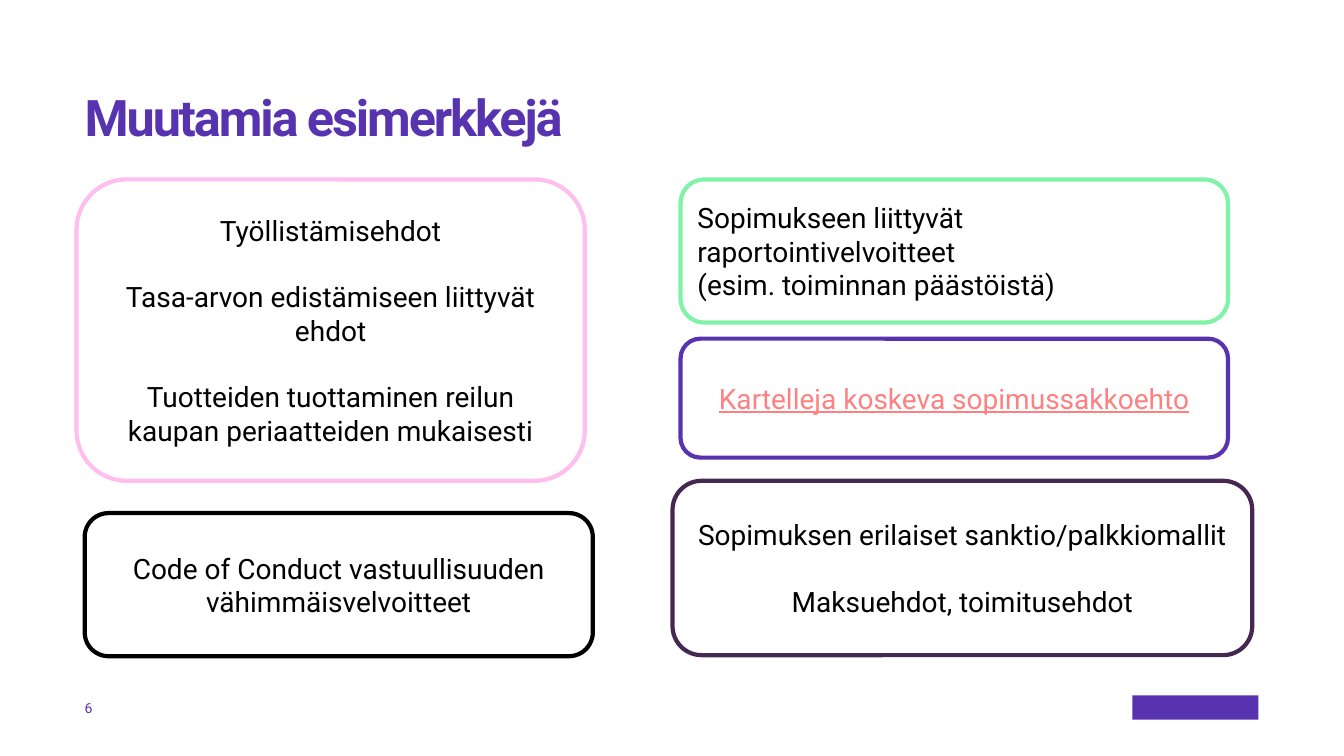
from pptx import Presentation
from pptx.dml.color import RGBColor
from pptx.enum.shapes import MSO_SHAPE
from pptx.enum.text import MSO_ANCHOR, PP_ALIGN
from pptx.util import Inches, Pt

LEFT, CENTER = PP_ALIGN.LEFT, PP_ALIGN.CENTER
TOP, MIDDLE = MSO_ANCHOR.TOP, MSO_ANCHOR.MIDDLE
COLORS = {
    "white": "FFFFFF", "black": "000000", "violet": "5733AF", "pink": "FFBFEE",
    "plum": "442850", "green": "81F3A9", "coral": "FE8081",
}
FONT = "Roboto"
BODY_SIZE = 20
BLANK_LINE = 23.4  # one line of body text, in points

TITLE = "Muutamia esimerkkejä"
PAGE_NUMBER = "6"

MARGIN = 0.84
RIGHT_COLUMN = 6.75
ROW_TOP = 1.78
COLUMN_WIDTH, RIGHT_WIDTH = 5.04, 5.43
CARD_HEIGHT = 1.42
FOOTER_TOP, FOOTER_HEIGHT = 6.9, 0.24

# (left, top, width, height), outline, text colour, alignment, paragraphs
CARDS = [
    ((0.76, ROW_TOP, COLUMN_WIDTH, 2.99), "pink", "black", CENTER,
     ["Työllistämisehdot", "Tasa-arvon edistämiseen liittyvät ehdot",
      "Tuotteiden tuottaminen reilun kaupan periaatteiden mukaisesti"]),
    ((MARGIN, 5.09, COLUMN_WIDTH, CARD_HEIGHT), "black", "black", CENTER,
     ["Code of Conduct vastuullisuuden vähimmäisvelvoitteet"]),
    ((6.67, 4.77, 5.75, 1.73), "plum", "black", CENTER,
     ["Sopimuksen erilaiset sanktio/palkkiomallit", "Maksuehdot, toimitusehdot"]),
    ((RIGHT_COLUMN, ROW_TOP, RIGHT_WIDTH, CARD_HEIGHT), "green", "black", LEFT,
     ["Sopimukseen liittyvät raportointivelvoitteet\v(esim. toiminnan päästöistä)"]),
    ((RIGHT_COLUMN, 3.36, RIGHT_WIDTH, 1.18), "violet", "coral", CENTER,
     ["Kartelleja koskeva sopimussakkoehto"]),
]


def rgb(name):
    return RGBColor.from_string(COLORS[name])


def set_font(paragraph, size, color):
    paragraph.font.name = FONT
    paragraph.font.size = Pt(size)
    paragraph.font.color.rgb = rgb(color)


def add_label(slide, text, box, size, anchor):
    """Add a violet one-line text box without insets and return its paragraph."""
    frame = slide.shapes.add_textbox(*map(Inches, box)).text_frame
    frame.margin_left = frame.margin_right = 0
    frame.margin_top = frame.margin_bottom = 0
    frame.word_wrap = True
    frame.vertical_anchor = anchor
    paragraph = frame.paragraphs[0]
    paragraph.text = text
    set_font(paragraph, size, "violet")
    return paragraph


def add_card(slide, box, outline, text_color, alignment, texts):
    card = slide.shapes.add_shape(MSO_SHAPE.ROUNDED_RECTANGLE, *map(Inches, box))
    card.shadow.inherit = False
    card.fill.solid()
    card.fill.fore_color.rgb = rgb("white")
    card.line.color.rgb = rgb(outline)
    card.line.width = Pt(3)
    frame = card.text_frame
    frame.word_wrap = True
    frame.vertical_anchor = MIDDLE
    for index, text in enumerate(texts):
        paragraph = frame.add_paragraph() if index else frame.paragraphs[0]
        paragraph.text = text
        paragraph.alignment = alignment
        if index:
            paragraph.space_before = Pt(BLANK_LINE)
        set_font(paragraph, BODY_SIZE, text_color)
        if text_color == "coral":
            paragraph.font.underline = True


def main():
    deck = Presentation()
    deck.slide_width, deck.slide_height = Inches(13.33), Inches(7.5)
    slide = deck.slides.add_slide(deck.slide_layouts[6])

    emblem = slide.shapes.add_shape(
        MSO_SHAPE.RECTANGLE, *map(Inches, (11.23, FOOTER_TOP, 1.25, FOOTER_HEIGHT)))
    emblem.shadow.inherit = False
    emblem.fill.solid()
    emblem.fill.fore_color.rgb = rgb("violet")
    emblem.line.fill.background()

    title = add_label(slide, TITLE, (MARGIN, 0.92, 11.66, 1.73), 36, TOP)
    title.line_spacing = 0.9
    title.font.bold = True
    title.runs[0]._r.get_or_add_rPr().set("spc", "-150")
    add_label(slide, PAGE_NUMBER, (MARGIN, FOOTER_TOP, 0.47, FOOTER_HEIGHT), 10, MIDDLE)

    for card in CARDS:
        add_card(slide, *card)
    deck.save("out.pptx")


if __name__ == "__main__":
    main()
